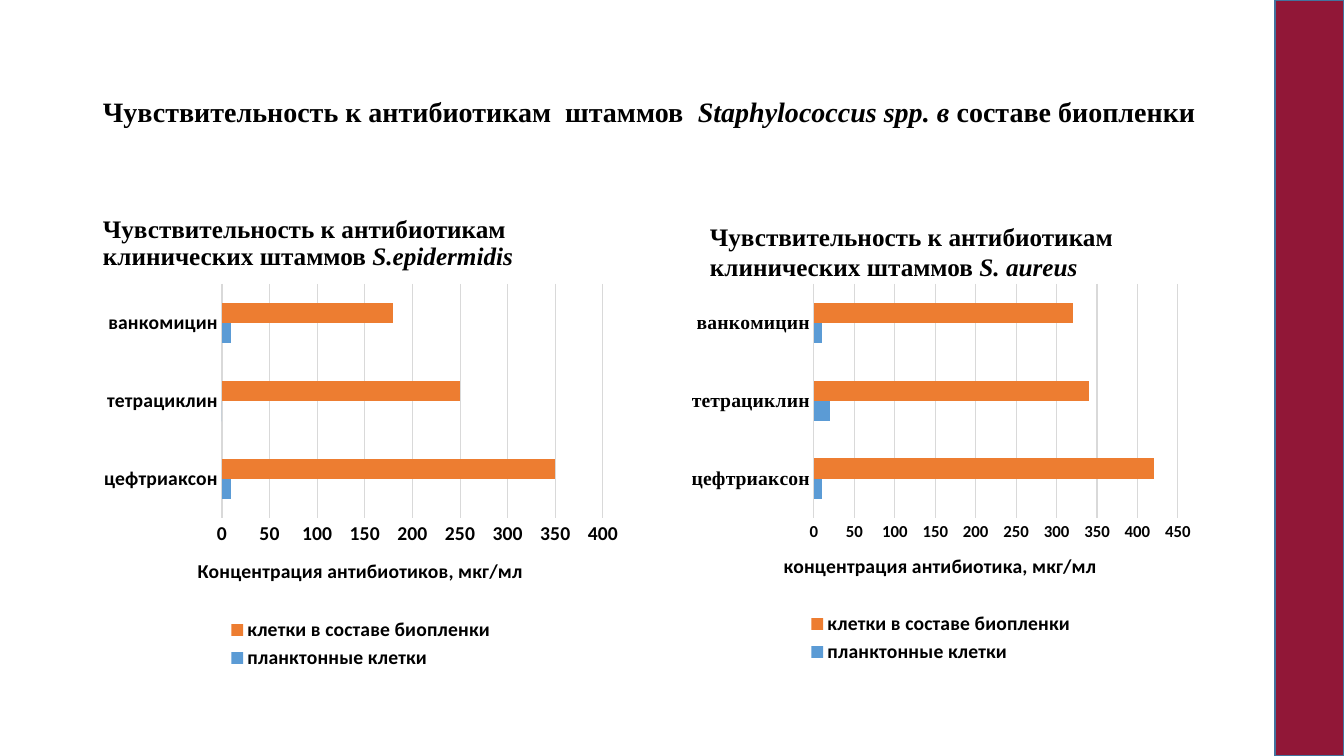
from lxml import etree
from pptx import Presentation
from pptx.chart.data import CategoryChartData
from pptx.dml.color import RGBColor
from pptx.enum.chart import XL_CHART_TYPE, XL_LEGEND_POSITION, XL_TICK_MARK
from pptx.enum.shapes import MSO_SHAPE
from pptx.enum.text import MSO_ANCHOR
from pptx.oxml.ns import qn
from pptx.util import Emu, Pt

# Content: text as (words, italic) pieces, boxes as left, top, width, height in px
SERIF, SANS = "Times New Roman", "Calibri"
DRUGS = ["цефтриаксон", "тетрациклин", "ванкомицин"]
PLANKTON, BIOFILM = "планктонные клетки", "клетки в составе биопленки"
SERIES_COLORS = {PLANKTON: "5B9BD5", BIOFILM: "ED7D31"}
SUBTITLE = "Чувствительность к антибиотикам клинических штаммов "

HEADINGS = [
    {"box": (93, 40, 1160, 146), "size": 20, "spacing": 0.9, "anchor": MSO_ANCHOR.MIDDLE,
     "pieces": [("Чувствительность к антибиотикам  штаммов  ", False),
                ("Staphylococcus spp. в ", True), ("составе биопленки", False)]},
    {"box": (93, 186, 480, 90), "size": 18, "spacing": 0.9, "anchor": MSO_ANCHOR.BOTTOM,
     "pieces": [(SUBTITLE, False), ("S.epidermidis", True)]},
    {"box": (700, 197, 480, 90), "size": 18, "spacing": 1.0, "anchor": MSO_ANCHOR.BOTTOM,
     "pieces": [(SUBTITLE, False), ("S. aureus", True)]},
]
STRAINS = [
    {"box": (93, 276, 536, 398), "plot": (222, 284, 381, 234),
     "title_at": (194, 554), "legend": (216, 614, 290, 60),
     "axis_title": "Концентрация антибиотиков, мкг/мл",
     "drug_font": SANS, "value_size": 14, "maximum": 400,
     "values": {PLANKTON: (10, 0, 10), BIOFILM: (350, 250, 180)}},
    {"box": (680, 276, 520, 392), "plot": (814, 284, 364, 234),
     "title_at": (780, 549), "legend": (796, 608, 290, 60),
     "axis_title": "концентрация антибиотика, мкг/мл",
     "drug_font": SERIF, "value_size": 12, "maximum": 450,
     "values": {PLANKTON: (10, 20, 10), BIOFILM: (420, 340, 320)}},
]
SIDE_BAND = (1275, 0, 69, 756)
PX = 914400 / 100.8


def px(*lengths):
    return [Emu(round(length * PX)) for length in lengths]


def color(hex_string):
    return RGBColor.from_string(hex_string)


def style(font, size, name=SANS):
    font.size, font.name, font.bold = Pt(size), name, True
    font.color.rgb = color("000000")


def place(parent, index, chart_box, area, inner=False):
    """Give a chart part a fixed place, as fractions of the chart."""
    for old in parent.findall(qn("c:layout")):
        parent.remove(old)
    layout = etree.Element(qn("c:layout"))
    manual = etree.SubElement(layout, qn("c:manualLayout"))
    left, top, width, height = chart_box
    settings = [("layoutTarget", "inner")] if inner else []
    settings += [("xMode", "edge"), ("yMode", "edge")]
    fractions = [(area[0] - left) / width, (area[1] - top) / height]
    if len(area) == 4:
        fractions += [area[2] / width, area[3] / height]
    settings += [(key, f"{part:.4f}") for key, part in zip("xywh", fractions)]
    for key, value in settings:
        etree.SubElement(manual, qn("c:" + key)).set("val", value)
    parent.insert(index, layout)


def add_heading(slide, heading):
    frame = slide.shapes.add_textbox(*px(*heading["box"])).text_frame
    frame.word_wrap = True
    frame.vertical_anchor = heading["anchor"]
    paragraph = frame.paragraphs[0]
    paragraph.line_spacing = heading["spacing"]
    style(paragraph.font, heading["size"], SERIF)
    for words, italic in heading["pieces"]:
        run = paragraph.add_run()
        run.text, run.font.italic = words, italic


def add_strain_chart(slide, strain):
    data = CategoryChartData()
    data.categories = DRUGS
    for name, values in strain["values"].items():
        data.add_series(name, values)
    box = strain["box"]
    chart = slide.shapes.add_chart(XL_CHART_TYPE.BAR_CLUSTERED, *px(*box), data).chart
    chart.has_title = False
    style(chart.font, 14)

    # Bars
    bars = chart.plots[0]
    bars.gap_width, bars.overlap, bars.vary_by_categories = 182, 0, False
    for series in bars.series:
        series.format.fill.solid()
        series.format.fill.fore_color.rgb = color(SERIES_COLORS[series.name])
    place(chart._chartSpace.chart.plotArea, 0, box, strain["plot"], inner=True)

    # Axes
    drugs, concentration = chart.category_axis, chart.value_axis
    for axis in (drugs, concentration):
        axis.major_tick_mark = axis.minor_tick_mark = XL_TICK_MARK.NONE
    style(drugs.tick_labels.font, 14, strain["drug_font"])
    style(concentration.tick_labels.font, strain["value_size"])
    concentration.minimum_scale, concentration.maximum_scale = 0, strain["maximum"]
    concentration.major_unit = 50
    concentration.has_major_gridlines = True
    for line in (drugs.format.line, concentration.major_gridlines.format.line):
        line.color.rgb, line.width = color("D9D9D9"), Pt(0.75)
    concentration.format.line.fill.background()
    axis_title = concentration.axis_title
    axis_title.text_frame.text = strain["axis_title"]
    style(axis_title.text_frame.paragraphs[0].font, 14)
    place(axis_title._element, 1, box, strain["title_at"])

    # Legend
    chart.has_legend = True
    legend = chart.legend
    legend.position, legend.include_in_layout = XL_LEGEND_POSITION.BOTTOM, False
    style(legend.font, 14)
    place(legend._element, 1, box, strain["legend"])


def main():
    deck = Presentation()
    deck.slide_width, deck.slide_height = px(1344, 756)
    slide = deck.slides.add_slide(deck.slide_layouts[6])
    for heading in HEADINGS:
        add_heading(slide, heading)
    for strain in STRAINS:
        add_strain_chart(slide, strain)

    # Side band
    band = slide.shapes.add_shape(MSO_SHAPE.RECTANGLE, *px(*SIDE_BAND))
    band.shadow.inherit = False
    band.fill.solid()
    band.fill.fore_color.rgb = color("911737")
    band.line.color.rgb, band.line.width = color("43739E"), Pt(1)
    deck.save("out.pptx")


if __name__ == "__main__":
    main()
